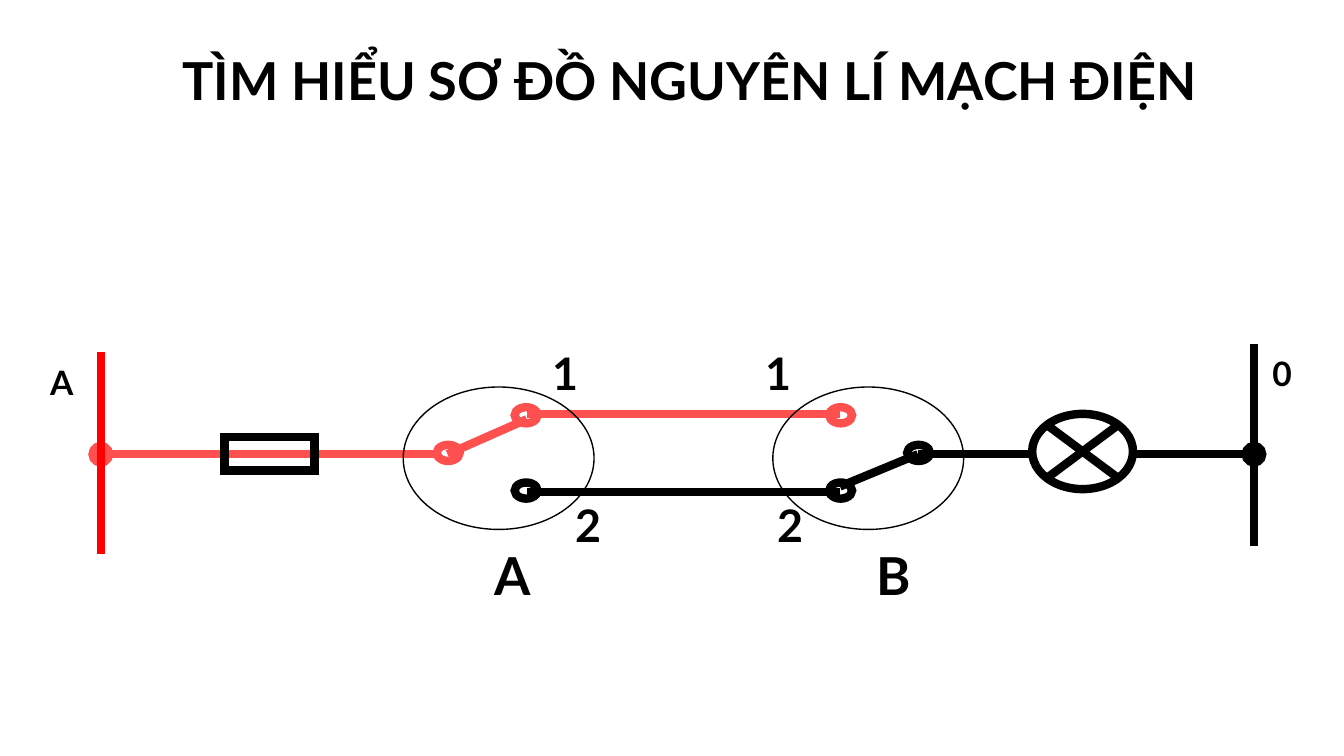
"""Build a slide with the schematic of a two-way switched lamp circuit."""
from lxml.etree import SubElement
from pptx import Presentation
from pptx.dml.color import RGBColor
from pptx.enum.shapes import MSO_CONNECTOR, MSO_SHAPE
from pptx.enum.text import MSO_ANCHOR, PP_ALIGN
from pptx.oxml.ns import qn
from pptx.util import Inches, Pt

BLACK = RGBColor(0x00, 0x00, 0x00)
WHITE = RGBColor(0xFF, 0xFF, 0xFF)
RED = RGBColor(0xFF, 0x00, 0x00)
LIVE = RGBColor(0xFF, 0x50, 0x50)

FONT = {"name": "Lato", "bold": True}
FRAME = {"vertical_anchor": MSO_ANCHOR.MIDDLE, "word_wrap": False}
TITLE_FRAME = {"vertical_anchor": MSO_ANCHOR.TOP, "word_wrap": True}

prs = Presentation()
prs.slide_width = Inches(10)
prs.slide_height = Inches(10 * 9 / 16)
s = prs.slides.add_slide(prs.slide_layouts[6])


def add_line(x1, y1, x2, y2, color, dot=None):
    ends = [Inches(v) for v in (x1, y1, x2, y2)]
    c = s.shapes.add_connector(MSO_CONNECTOR.STRAIGHT, *ends)
    c.line.color.rgb = color
    c.line.width = Pt(4.5)
    if dot:
        SubElement(c.line._get_or_add_ln(), qn(f"a:{dot}")).set("type", "oval")
    SubElement(c._element.spPr, qn("a:effectLst"))


def add_outline(kind, x, y, w, h, color, width=4.5, fill=None):
    sp = s.shapes.add_shape(kind, Inches(x), Inches(y), Inches(w), Inches(h))
    sp.shadow.inherit = False
    sp.line.color.rgb = color
    sp.line.width = Pt(width)
    SubElement(sp.line._get_or_add_ln(), qn("a:miter")).set("lim", "800000")
    if fill is None:
        sp.fill.background()
    else:
        sp.fill.solid()
        sp.fill.fore_color.rgb = fill


add_line(0.75, 3.38, 3.25, 3.38, LIVE, "headEnd")

contacts = [
    (3.83, 3.03, LIVE), (3.25, 3.31, LIVE), (3.83, 3.59, BLACK),
    (6.17, 3.03, LIVE), (6.17, 3.59, BLACK), (6.75, 3.31, BLACK),
]
for x, y, color in contacts:
    add_outline(MSO_SHAPE.OVAL, x, y, 0.17, 0.12, color)

add_line(6.83, 3.38, 9.33, 3.38, BLACK, "tailEnd")
add_outline(MSO_SHAPE.FLOWCHART_SUMMING_JUNCTION, 7.68, 3.08, 0.75, 0.56,
            BLACK, fill=WHITE)
add_outline(MSO_SHAPE.RECTANGLE, 1.67, 3.25, 0.67, 0.25, BLACK)

wires = [
    (0.75, 2.62, 0.75, 4.12, RED), (9.33, 2.56, 9.33, 4.06, BLACK),
    (3.92, 3.08, 6.25, 3.08, LIVE), (3.92, 3.66, 6.25, 3.66, BLACK),
    (3.33, 3.38, 3.92, 3.12, LIVE), (6.25, 3.62, 6.83, 3.38, BLACK),
]
for wire in wires:
    add_line(*wire)

for x in (5.75, 3):
    add_outline(MSO_SHAPE.OVAL, x, 2.88, 1.42, 1.06, BLACK, 0.75)

labels = [
    ("A", 0.25, 2.69, 18), ("0", 9.33, 2.62, 18),
    ("1", 4, 2.62, 24), ("1", 5.58, 2.62, 24),
    ("2", 5.67, 3.75, 24), ("2", 4.17, 3.75, 24),
    ("A", 3.58, 4.12, 28), ("B", 6.42, 4.12, 28),
]
texts = [(text, x, y, 0.42, 0.31, size, FRAME) for text, x, y, size in labels]
texts.append(("TÌM HIỂU SƠ ĐỒ NGUYÊN LÍ MẠCH ĐIỆN",
              0.67, 0.31, 8.92, 0.57, 28, TITLE_FRAME))
for text, x, y, w, h, size, frame in texts:
    tf = s.shapes.add_textbox(Inches(x), Inches(y), Inches(w), Inches(h)).text_frame
    for key, value in frame.items():
        setattr(tf, key, value)
    p = tf.paragraphs[0]
    p.alignment = PP_ALIGN.CENTER
    r = p.add_run()
    r.text = text
    r.font.size = Pt(size)
    r.font.color.rgb = BLACK
    for key, value in FONT.items():
        setattr(r.font, key, value)

prs.save("out.pptx")
